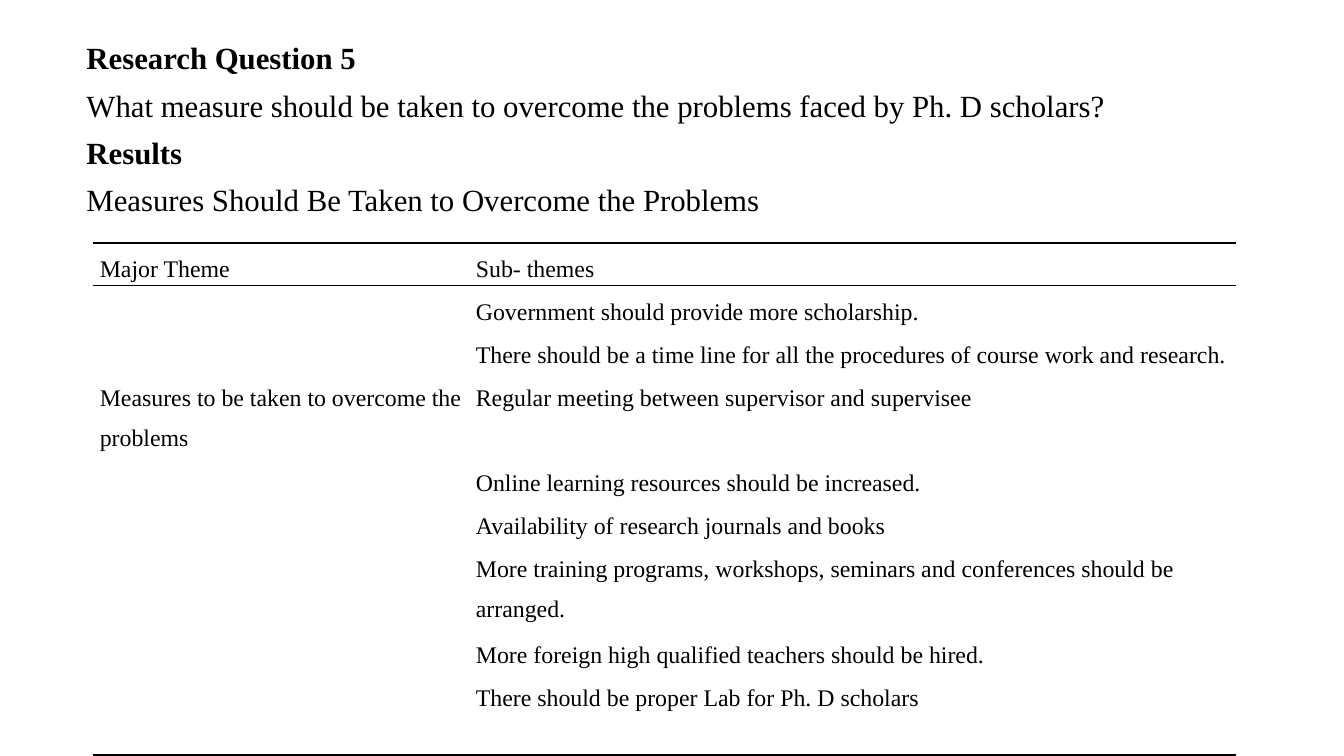
from dataclasses import dataclass

from lxml.etree import SubElement
from pptx import Presentation
from pptx.dml.color import RGBColor
from pptx.oxml.ns import qn
from pptx.util import Inches, Pt


@dataclass(frozen=True)
class Theme:
    font: str = "Times New Roman"
    ink: str = "000000"
    paper: str = "FFFFFF"
    heading_size: int = 22
    table_size: int = 17
    rule_width: int = 1


HEADINGS = [
    ("Research Question 5", True),
    ("What measure should be taken to overcome the problems faced by Ph. D scholars?", False),
    ("Results", True),
    ("Measures Should Be Taken to Overcome the Problems", False),
]

ROWS = [
    ("Major Theme", "Sub- themes"),
    ("", "Government should provide more scholarship."),
    ("", "There should be a time line for all the procedures of course work and research."),
    ("Measures to be taken to overcome the problems",
     "Regular meeting between supervisor and supervisee"),
    ("", "Online learning resources should be increased."),
    ("", "Availability of research journals and books"),
    ("", "More training programs, workshops, seminars and conferences should be arranged."),
    ("", "More foreign high qualified teachers should be hired."),
    ("", "There should be proper Lab for Ph. D scholars"),
    ("", ""),
]
COLUMN_WIDTHS = (3.73, 7.61)
LINE_HEIGHT = 0.4
TWO_LINE_ROWS = {3, 6}


class SlideBuilder:
    def __init__(self, slide, theme):
        self.slide = slide
        self.theme = theme
        fill = slide.background.fill
        fill.solid()
        fill.fore_color.rgb = RGBColor.from_string(theme.paper)

    def run(self, p, text, size, bold=False):
        r = p.add_run()
        r.text = text
        r.font.name = self.theme.font
        r.font.size = Pt(size)
        r.font.bold = bold
        r.font.color.rgb = RGBColor.from_string(self.theme.ink)

    def headings(self, lines, left, top, width, height):
        tf = self.slide.shapes.add_textbox(
            Inches(left), Inches(top), Inches(width), Inches(height)).text_frame
        tf.word_wrap = True
        for i, (text, bold) in enumerate(lines):
            p = tf.add_paragraph() if i else tf.paragraphs[0]
            p.line_spacing = 0.9
            p.space_before = Pt(10)
            self.run(p, text, self.theme.heading_size, bold)

    def borders(self, cell, ruled):
        """Rule the sides named in ruled (T, B) and clear the other sides."""
        tc_pr = cell._tc.get_or_add_tcPr()
        for i, side in enumerate("LRTB"):
            ln = SubElement(tc_pr, qn(f"a:ln{side}"), w=str(Pt(self.theme.rule_width)))
            if side in ruled:
                fill = SubElement(ln, qn("a:solidFill"))
                SubElement(fill, qn("a:srgbClr"), val=self.theme.ink)
            else:
                SubElement(ln, qn("a:noFill"))
            tc_pr.insert(i, ln)

    def cell(self, cell, text, ruled):
        cell.margin_left = cell.margin_right = Inches(0.07)
        cell.margin_top = cell.margin_bottom = 0
        cell.fill.background()
        self.borders(cell, ruled)
        if text:
            p = cell.text_frame.paragraphs[0]
            p.line_spacing = 1.5
            self.run(p, text, self.theme.table_size)

    def table(self, rows, left, top):
        heights = [LINE_HEIGHT * (2 if i in TWO_LINE_ROWS else 1) for i in range(len(rows))]
        table = self.slide.shapes.add_table(
            len(rows), len(COLUMN_WIDTHS), Inches(left), Inches(top),
            Inches(sum(COLUMN_WIDTHS)), Inches(sum(heights))).table
        table.first_row = table.horz_banding = False
        for column, width in zip(table.columns, COLUMN_WIDTHS):
            column.width = Inches(width)
        ruled_sides = {0: "TB", 1: "T", len(rows) - 1: "B"}
        for i, texts in enumerate(rows):
            table.rows[i].height = Inches(heights[i])
            for j, text in enumerate(texts):
                self.cell(table.cell(i, j), text, ruled_sides.get(i, ""))


def main():
    prs = Presentation()
    prs.slide_width, prs.slide_height = Inches(13.33), Inches(7.5)
    s = SlideBuilder(prs.slides.add_slide(prs.slide_layouts[6]), Theme())
    s.headings(HEADINGS, 0.76, 0.38, 11.5, 6.99)
    s.table(ROWS, 0.92, 2.41)
    prs.save("out.pptx")


if __name__ == "__main__":
    main()
